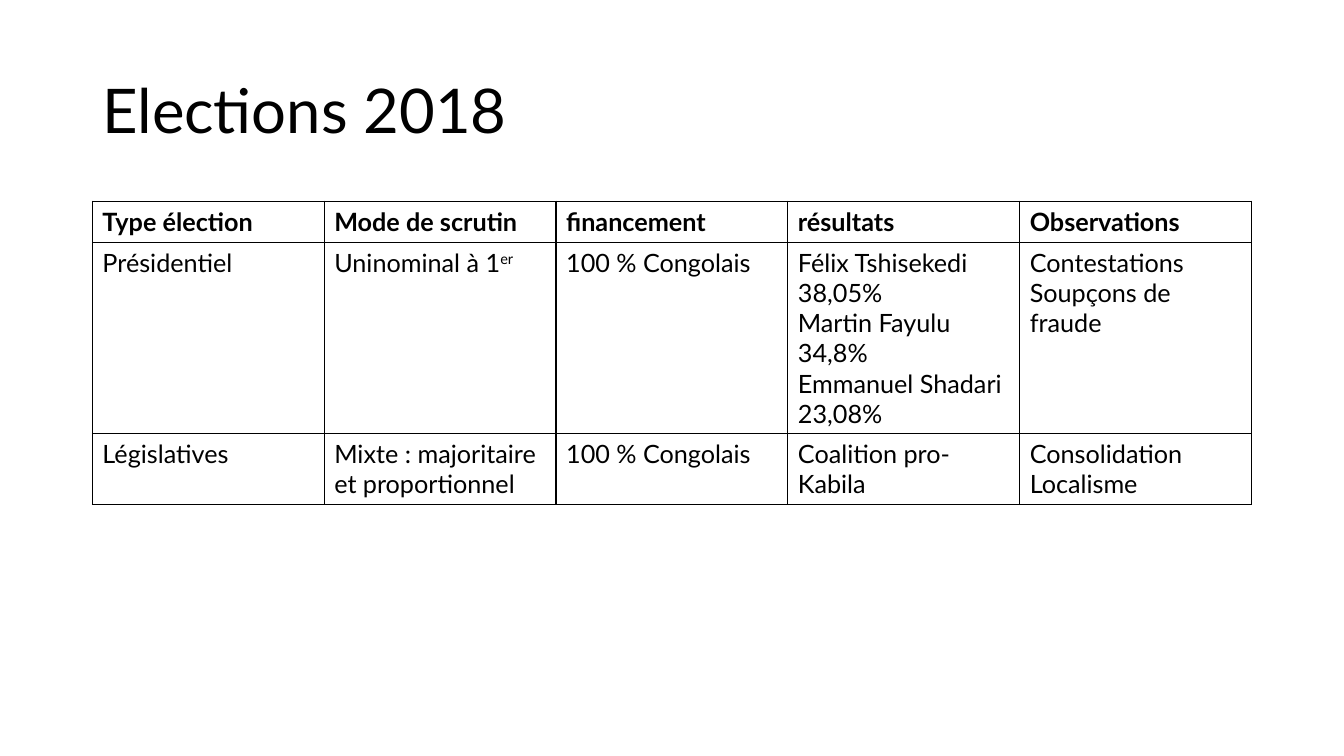
"""Build the slide on the 2018 elections: a title above a bordered table."""
from lxml.etree import SubElement
from pptx import Presentation
from pptx.dml.color import RGBColor
from pptx.enum.text import MSO_ANCHOR
from pptx.oxml.ns import qn
from pptx.util import Pt

BLACK = RGBColor(0, 0, 0)
FONT = "Lato"
LEFT, WIDTH = Pt(66), Pt(828)
ROW_HEIGHTS = [29.2, 136.6, 50.8]
ELECTIONS = [
    ["Type élection", "Mode de scrutin", "financement", "résultats", "Observations"],
    ["Présidentiel", "Uninominal à 1", "100 % Congolais",
     "Félix Tshisekedi 38,05%\nMartin Fayulu 34,8%\nEmmanuel Shadari 23,08%",
     "Contestations\nSoupçons de fraude"],
    ["Législatives", "Mixte : majoritaire et proportionnel", "100 % Congolais",
     "Coalition pro-Kabila", "Consolidation Localisme"],
]


def style(paragraph, size, bold=False):
    font = paragraph.font
    font.name, font.size, font.bold = FONT, Pt(size), bold
    font.color.rgb = BLACK


def add_borders(cell):
    properties = cell._tc.get_or_add_tcPr()
    for position, side in enumerate(("a:lnL", "a:lnR", "a:lnT", "a:lnB")):
        border = SubElement(properties, qn(side), w=str(Pt(1)))
        properties.remove(border)
        properties.insert(position, border)
        fill = SubElement(border, qn("a:solidFill"))
        SubElement(fill, qn("a:srgbClr"), val=str(BLACK))


presentation = Presentation()
presentation.slide_width, presentation.slide_height = Pt(960), Pt(540)
slide = presentation.slides.add_slide(presentation.slide_layouts[6])

title = slide.shapes.add_textbox(LEFT, Pt(28.75), WIDTH, Pt(104.4)).text_frame
title.word_wrap = True
title.vertical_anchor = MSO_ANCHOR.MIDDLE
title.text = "Elections 2018"
title.paragraphs[0].line_spacing = 0.9
style(title.paragraphs[0], 44)

table = slide.shapes.add_table(
    len(ELECTIONS), len(ELECTIONS[0]), LEFT, Pt(143.75), WIDTH, Pt(sum(ROW_HEIGHTS))
).table
table.horz_banding = False
for row, (height, entries) in enumerate(zip(ROW_HEIGHTS, ELECTIONS)):
    table.rows[row].height = Pt(height)
    for column, entry in enumerate(entries):
        cell = table.cell(row, column)
        cell.fill.background()
        add_borders(cell)
        cell.text_frame.text = entry
        for paragraph in cell.text_frame.paragraphs:
            style(paragraph, 18, bold=row == 0)

ordinal = table.cell(1, 1).text_frame.paragraphs[0].add_run()
ordinal.text = "er"
ordinal._r.get_or_add_rPr().set("baseline", "30000")

presentation.save("out.pptx")
